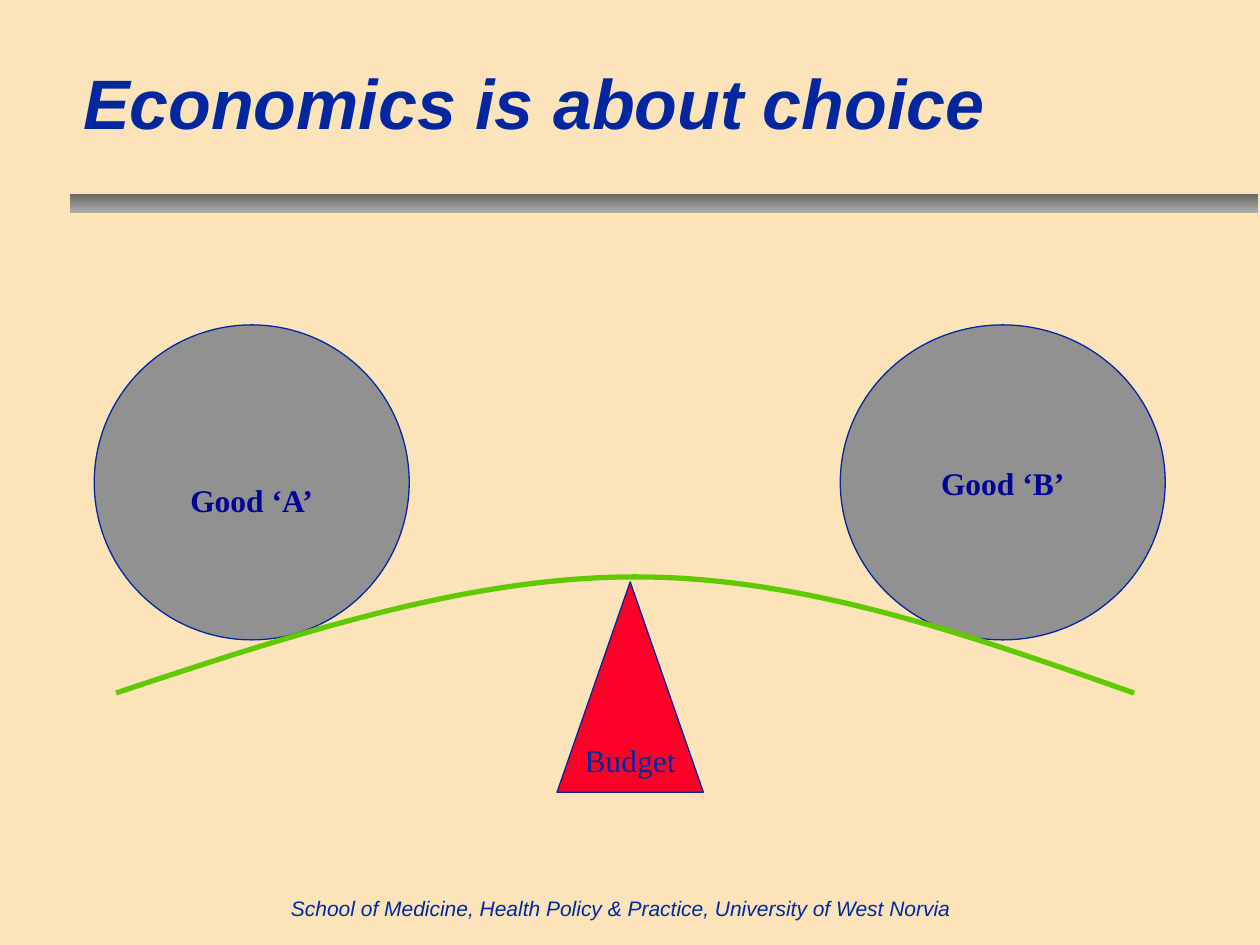
from lxml.etree import SubElement
from pptx import Presentation
from pptx.dml.color import RGBColor
from pptx.enum.shapes import MSO_SHAPE as Kind
from pptx.enum.text import MSO_ANCHOR as Anchor, MSO_AUTO_SIZE as Fit, PP_ALIGN as Align
from pptx.oxml.ns import qn
from pptx.util import Cm, Pt

CREAM = RGBColor(0xFD, 0xE3, 0xBA)
BLUE = RGBColor(0x00, 0x27, 0x9F)
NAVY = RGBColor(0x00, 0x00, 0x99)
GREY = RGBColor(0x91, 0x91, 0x91)
RED = RGBColor(0xFC, 0x01, 0x28)
GREEN = RGBColor(0x60, 0xC9, 0x00)
DARK = RGBColor(0x66, 0x66, 0x66)
LIGHT = RGBColor(0xAC, 0xAC, 0xAC)


def write(frame, text, font, size, color, bold=False, italic=False, align=Align.CENTER):
    para = frame.paragraphs[0]
    para.alignment = align
    run = para.add_run()
    run.text = text
    run.font.name = font
    run.font.size = Pt(size)
    run.font.color.rgb = color
    run.font.bold = bold
    run.font.italic = italic


deck = Presentation()
deck.slide_width, deck.slide_height = Cm(25.4), Cm(19.05)
slide = deck.slides.add_slide(deck.slide_layouts[5])
slide.background.fill.solid()
slide.background.fill.fore_color.rgb = CREAM
shapes = slide.shapes

# Title
title = shapes.title
title.left, title.top, title.width, title.height = Cm(1.42), Cm(0.43), Cm(22.56), Cm(3.23)
title.text_frame.auto_size = Fit.NONE
title.text_frame.vertical_anchor = Anchor.MIDDLE
write(title.text_frame, "Economics is about choice", "Arial", 40, BLUE,
      bold=True, italic=True, align=Align.LEFT)

# Shaded bar under the title
bar = shapes.add_shape(Kind.RECTANGLE, Cm(1.42), Cm(3.91), Cm(23.95), Cm(0.38))
bar.shadow.inherit = False
bar.line.fill.background()
bar.fill.gradient()
bar.fill.gradient_angle = 270
for stop, color in zip(bar.fill.gradient_stops, (DARK, LIGHT)):
    stop.color.rgb = color

# Footer
foot = shapes.add_textbox(Cm(0.05), Cm(17.93), Cm(24.94), Cm(0.76))
foot.text_frame.word_wrap = True
write(foot.text_frame, "School of Medicine, Health Policy & Practice, University of West Norvia",
      "Arial", 12, BLUE, italic=True)

# Pivot and the two goods; the top inset lowers the label
parts = [
    (Kind.ISOSCELES_TRIANGLE, 11.23, 11.73, 2.95, 4.24, RED, "Budget", BLUE, False, 0.93),
    (Kind.OVAL, 1.9, 6.55, 6.35, 6.35, GREY, "Good ‘A’", NAVY, True, 0.83),
    (Kind.OVAL, 16.94, 6.55, 6.55, 6.35, GREY, "Good ‘B’", NAVY, True, 0.13),
]
for kind, left, top, width, height, fill, text, ink, bold, inset in parts:
    part = shapes.add_shape(kind, Cm(left), Cm(top), Cm(width), Cm(height))
    part.shadow.inherit = False
    part.fill.solid()
    part.fill.fore_color.rgb = fill
    part.line.color.rgb = BLUE
    part.line.width = Pt(0.75)
    frame = part.text_frame
    frame.word_wrap = False
    frame.vertical_anchor = Anchor.MIDDLE
    frame.margin_top = Cm(inset)
    write(frame, text, "Times New Roman", 18, ink, bold=bold)

# Bent beam: a start point, then two curves of three points each
spots = [(2.34, 13.97), (5.87, 12.8), (9.4, 11.63), (12.8, 11.63),
         (16.23, 11.63), (19.53, 12.8), (22.86, 13.97)]
start, *rest = [(Cm(x), Cm(y)) for x, y in spots]
pen = shapes.build_freeform(*start)
pen.add_line_segments(rest, close=False)
beam = pen.convert_to_shape()
beam.shadow.inherit = False
beam.fill.background()
beam.line.color.rgb = GREEN
beam.line.width = Pt(3)

# Turn each three straight steps into one cubic curve
route = beam.element.find(".//" + qn("a:path"))
steps = route.findall(qn("a:lnTo"))
for first in range(0, len(steps), 3):
    curve = SubElement(route, qn("a:cubicBezTo"))
    for step in steps[first:first + 3]:
        curve.append(step[0])
        route.remove(step)

deck.save("out.pptx")
